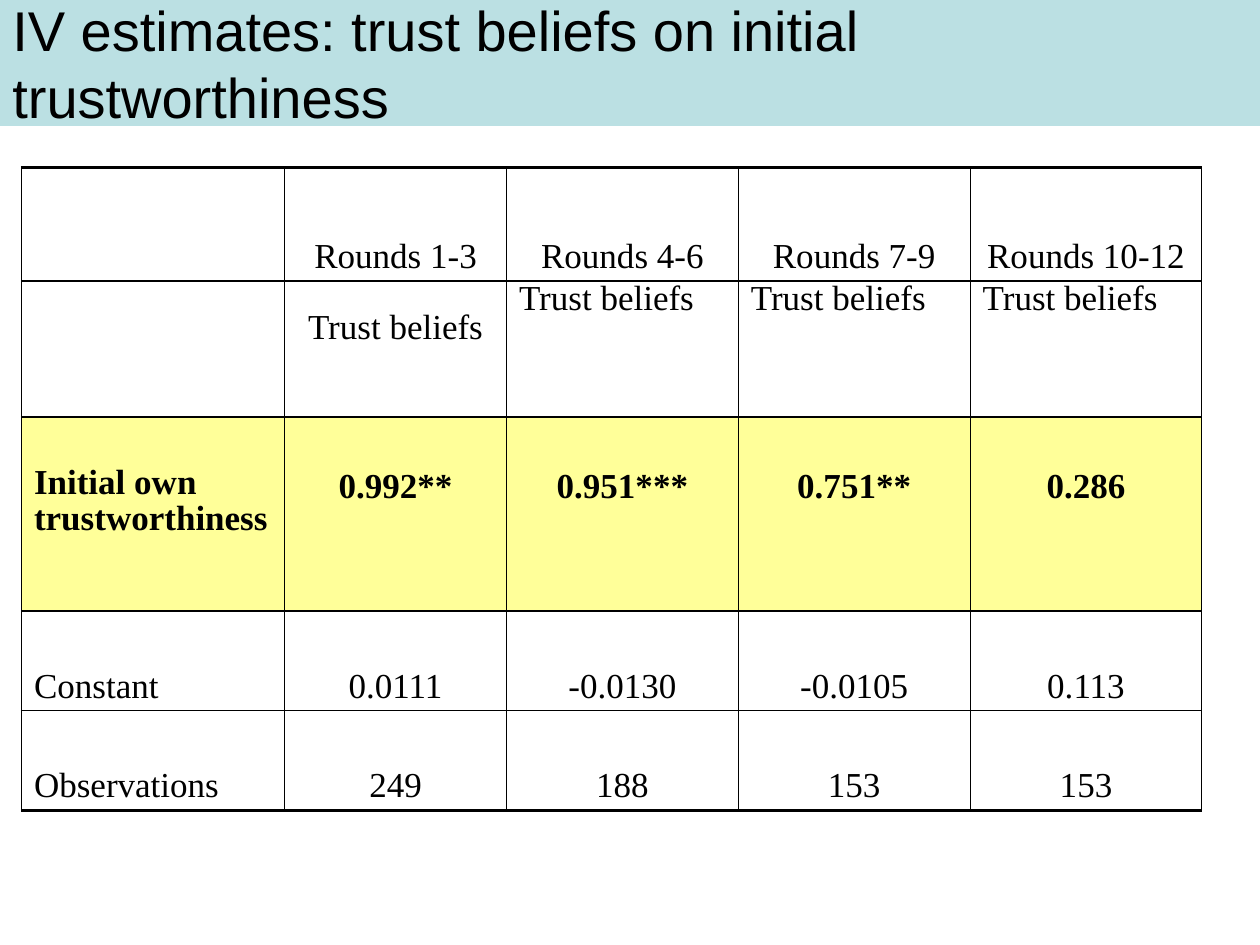
from lxml import etree
from pptx import Presentation
from pptx.dml.color import RGBColor
from pptx.enum.shapes import MSO_SHAPE
from pptx.enum.text import MSO_ANCHOR, PP_ALIGN
from pptx.oxml.ns import qn
from pptx.util import Inches, Pt

RECTANGLE = MSO_SHAPE.RECTANGLE
TOP, MIDDLE, BOTTOM = MSO_ANCHOR.TOP, MSO_ANCHOR.MIDDLE, MSO_ANCHOR.BOTTOM
LEFT, CENTER = PP_ALIGN.LEFT, PP_ALIGN.CENTER
BLACK = RGBColor(0x00, 0x00, 0x00)
BANNER = RGBColor(0xBB, 0xE0, 0xE3)
HIGHLIGHT = RGBColor(0xFF, 0xFF, 0x99)

TITLE = "IV estimates: trust beliefs on initial trustworthiness"
ROWS = [
    ["", "Rounds 1-3", "Rounds 4-6", "Rounds 7-9", "Rounds 10-12"],
    ["", "Trust beliefs", "Trust beliefs", "Trust beliefs", "Trust beliefs"],
    ["Initial own\ntrustworthiness", "0.992**", "0.951***", "0.751**", "0.286"],
    ["Constant", "0.0111", "-0.0130", "-0.0105", "0.113"],
    ["Observations", "249", "188", "153", "153"],
]
COLUMN_WIDTHS = [2.09, 1.76, 1.84, 1.84, 1.84]
ROW_HEIGHTS = [0.9, 1.08, 1.54, 0.79, 0.79]
HORIZONTAL_RULES = [2, 0.75, 1, 0.75, 0.75, 2]
VERTICAL_RULE = 0.75
SUBHEADER_ROW, HIGHLIGHT_ROW = 1, 2
DEFAULT_BOTTOM = 0.05
RAISED_BOTTOMS = {(1, 1): 0.57, (2, 0): 0.59} | {(2, column): 0.85 for column in range(1, 5)}


def add_text(paragraph, text, size, font, bold=False):
    run = paragraph.add_run()
    run.text = text
    run.font.size = Pt(size)
    run.font.name = font
    run.font.bold = bold
    run.font.color.rgb = BLACK


def set_borders(cell, row):
    properties = cell._tc.get_or_add_tcPr()
    widths = {
        "a:lnL": VERTICAL_RULE,
        "a:lnR": VERTICAL_RULE,
        "a:lnT": HORIZONTAL_RULES[row],
        "a:lnB": HORIZONTAL_RULES[row + 1],
    }
    for position, (tag, width) in enumerate(widths.items()):
        line = etree.Element(qn(tag), w=str(Pt(width)))
        fill = etree.SubElement(line, qn("a:solidFill"))
        etree.SubElement(fill, qn("a:srgbClr"), val=str(BLACK))
        properties.insert(position, line)


def fill_cell(cell, row, column, text):
    if row == HIGHLIGHT_ROW:
        cell.fill.solid()
        cell.fill.fore_color.rgb = HIGHLIGHT
    else:
        cell.fill.background()
    set_borders(cell, row)
    top_left = row == SUBHEADER_ROW and column > 1
    cell.vertical_anchor = TOP if top_left else BOTTOM
    cell.margin_bottom = Inches(RAISED_BOTTOMS.get((row, column), DEFAULT_BOTTOM))
    if not text:
        return
    frame = cell.text_frame
    for index, line in enumerate(text.split("\n")):
        paragraph = frame.add_paragraph() if index else frame.paragraphs[0]
        paragraph.alignment = LEFT if top_left or column == 0 else CENTER
        paragraph.line_spacing = 0.75
        paragraph.space_before = Pt(4)
        add_text(paragraph, line, 20, "Times New Roman", row == HIGHLIGHT_ROW)


def add_banner(slide):
    banner = slide.shapes.add_shape(RECTANGLE, 0, 0, Inches(10), Inches(1))
    banner.shadow.inherit = False
    banner.fill.solid()
    banner.fill.fore_color.rgb = BANNER
    banner.line.fill.background()
    frame = banner.text_frame
    frame.word_wrap = True
    frame.vertical_anchor = MIDDLE
    paragraph = frame.paragraphs[0]
    paragraph.alignment = LEFT
    add_text(paragraph, TITLE, 32, "Arial")


def add_estimates(slide):
    table = slide.shapes.add_table(
        len(ROWS), len(COLUMN_WIDTHS), Inches(0.17), Inches(1.33),
        Inches(sum(COLUMN_WIDTHS)), Inches(sum(ROW_HEIGHTS)),
    ).table
    table.first_row = False
    table.horz_banding = False
    for column, width in zip(table.columns, COLUMN_WIDTHS):
        column.width = Inches(width)
    for row, height in zip(table.rows, ROW_HEIGHTS):
        row.height = Inches(height)
    for row, texts in enumerate(ROWS):
        for column, text in enumerate(texts):
            fill_cell(table.cell(row, column), row, column, text)


def main():
    presentation = Presentation()
    presentation.slide_width = Inches(10)
    presentation.slide_height = Inches(7.5)
    slide = presentation.slides.add_slide(presentation.slide_layouts[6])
    add_banner(slide)
    add_estimates(slide)
    presentation.save("out.pptx")


if __name__ == "__main__":
    main()
